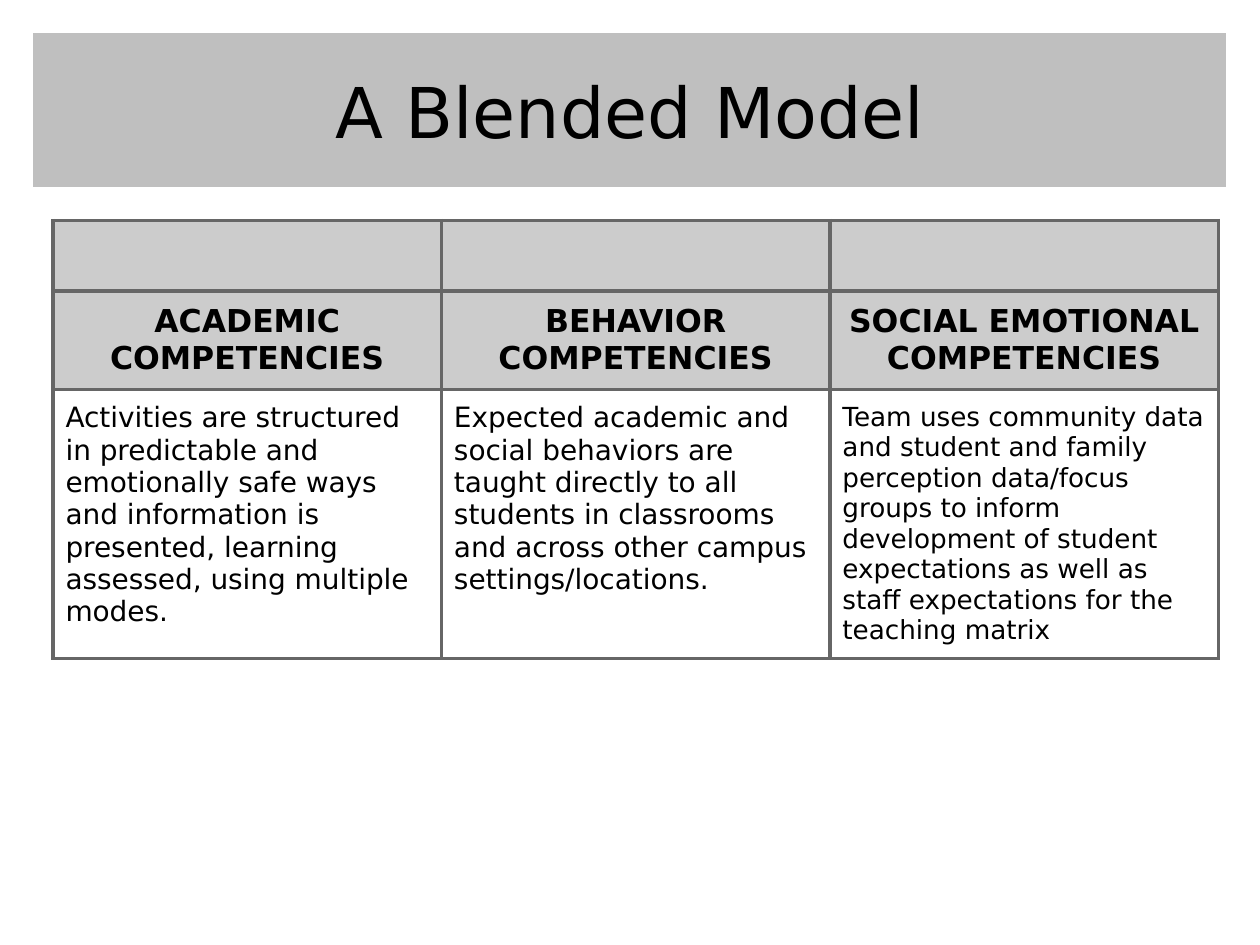
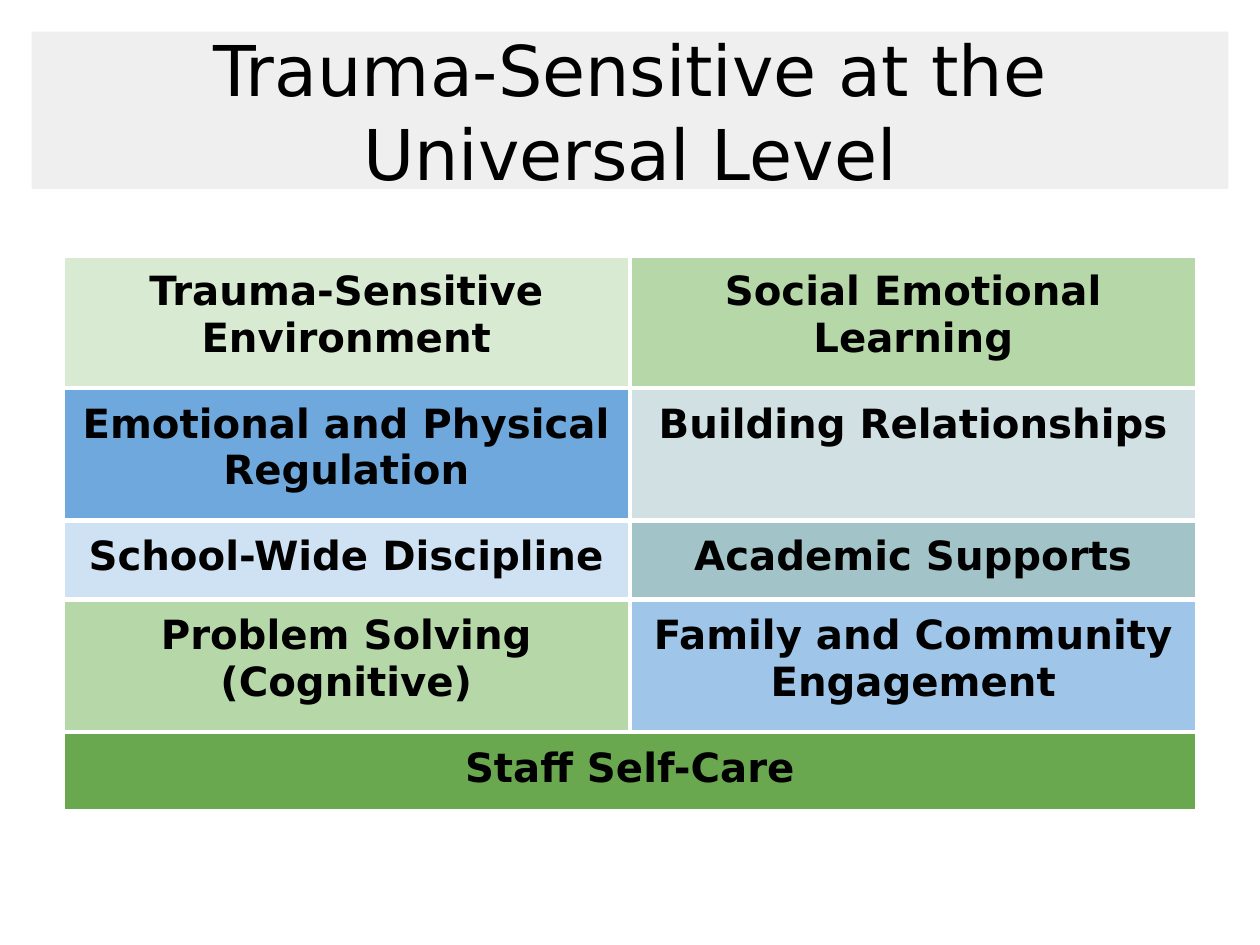
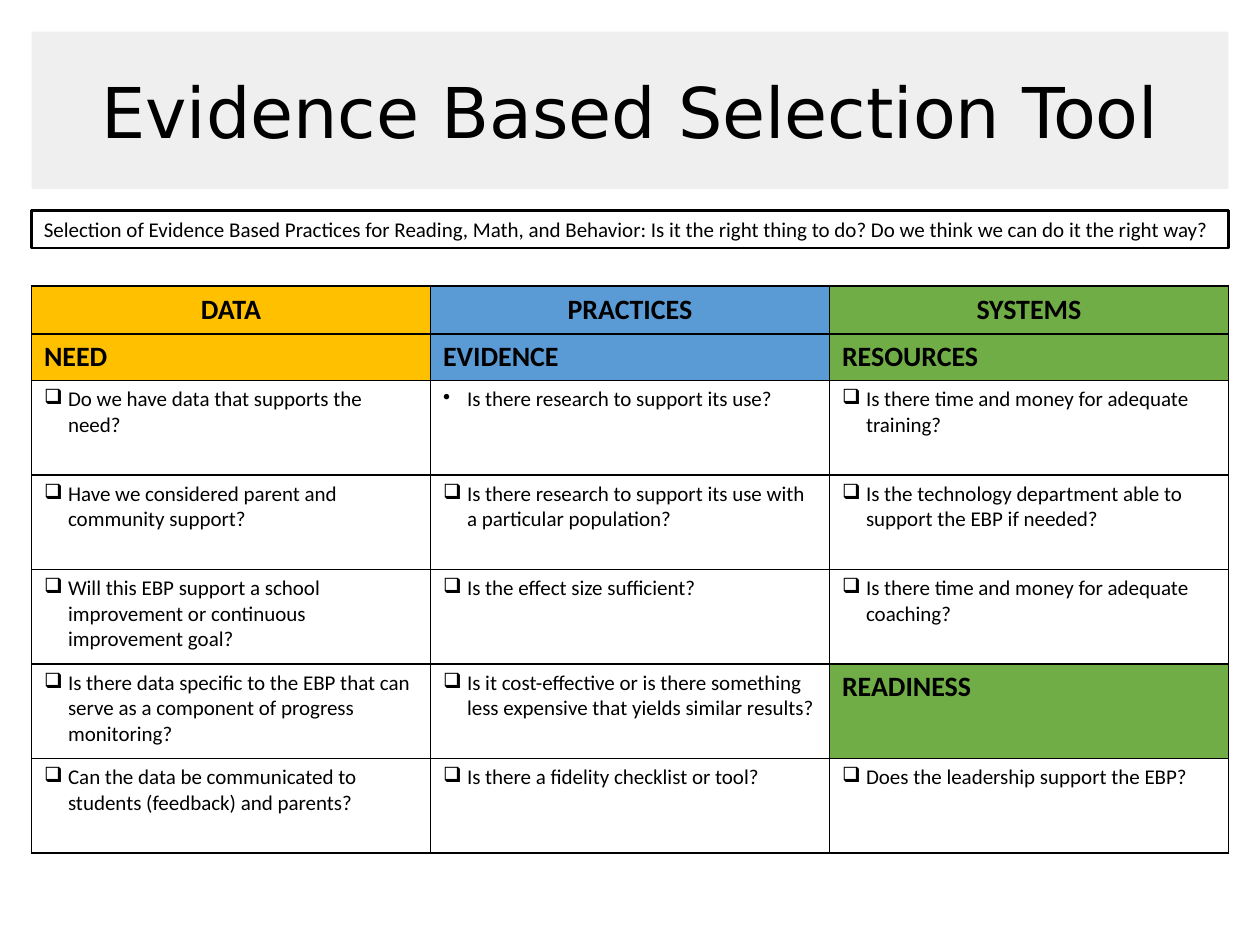
from dataclasses import dataclass

from lxml.etree import SubElement
from pptx import Presentation
from pptx.dml.color import RGBColor as RGB
from pptx.enum.shapes import MSO_SHAPE as SHAPE
from pptx.enum.text import MSO_ANCHOR as ANCHOR, MSO_AUTO_SIZE as AUTO, PP_ALIGN as ALIGN
from pptx.oxml.ns import qn
from pptx.util import Inches, Pt


@dataclass(frozen=True)
class Theme:
    font: str = "DejaVu Sans"
    tool_font: str = "Calibri"
    ink: str = "000000"
    paper: str = "FFFFFF"
    dark_band: str = "BFBFBF"
    light_band: str = "E8E8E8"
    header: str = "CCCCCC"
    rule: str = "666666"
    data: str = "FFC000"
    practices: str = "5B9BD5"
    systems: str = "70AD47"
    title_size: int = 40
    topic_size: int = 23
    heading_size: int = 18
    subheading_size: int = 16
    question_size: int = 12


theme = Theme()


def add_grid(slide, left, top, width, columns, row_heights):
    """Add a plain table with equal columns and the given row heights."""
    frame = slide.shapes.add_table(len(row_heights), columns, Inches(left), Inches(top),
                                   Inches(width), Inches(sum(row_heights)))
    grid = frame.table
    grid.first_row = grid.horz_banding = False
    for column in grid.columns:
        column.width = Inches(width / columns)
    for row, height in zip(grid.rows, row_heights):
        row.height = Inches(height)
    return grid


def style_cell(cell, text, size, border, fill=None, font=theme.font, bold=False,
               align=ALIGN.LEFT, anchor=ANCHOR.TOP, pad=0.1, bullet=None):
    """Fill a cell with text and give it its border (colour, points) and colour."""
    border_color, border_width = border
    cell.margin_left = cell.margin_right = Inches(0.1)
    cell.margin_top = cell.margin_bottom = Inches(pad)
    cell.vertical_anchor = anchor
    properties = cell._tc.get_or_add_tcPr()
    for side in ("a:lnL", "a:lnR", "a:lnT", "a:lnB"):
        line = SubElement(properties, qn(side), w=str(Pt(border_width)))
        SubElement(SubElement(line, qn("a:solidFill")), qn("a:srgbClr"), val=border_color)
    if fill:
        cell.fill.solid()
        cell.fill.fore_color.rgb = RGB.from_string(fill)
    else:
        cell.fill.background()

    cell.text = text
    for paragraph in cell.text_frame.paragraphs:
        paragraph.alignment = align
        paragraph.font.name = font
        paragraph.font.size = Pt(size)
        paragraph.font.bold = bold
        paragraph.font.color.rgb = RGB.from_string(theme.ink)
        if bullet:
            layout = paragraph._p.get_or_add_pPr()
            layout.set("marL", str(Inches(0.19)))
            layout.set("indent", str(-Inches(0.19)))
            bullet_mark = SubElement(layout, qn("a:buChar"), char=bullet)
            bullet_mark.addprevious(layout.makeelement(qn("a:buFontTx"), {}))
            layout.append(layout.find(qn("a:defRPr")))


prs = Presentation()
prs.slide_width, prs.slide_height = Inches(10), Inches(7.5)

# Slides with their title bands
slides = []
for heading, band, opacity in (
    ("A Blended Model", theme.dark_band, 100),
    ("Trauma-Sensitive at the Universal Level", theme.light_band, 67),
    ("Evidence Based Selection Tool", theme.light_band, 67),
):
    slide = prs.slides.add_slide(prs.slide_layouts[5])
    title = slide.shapes.title
    title.left, title.top, title.width, title.height = map(Inches, (0.25, 0.25, 9.5, 1.25))
    title.fill.solid()
    title.fill.fore_color.rgb = RGB.from_string(band)
    if opacity < 100:
        band_color = title._element.spPr.find(qn("a:solidFill"))[0]
        SubElement(band_color, qn("a:alpha"), val=str(opacity * 1000))
    title.text_frame.text = heading
    title.text_frame.auto_size = AUTO.NONE
    title.text_frame.vertical_anchor = ANCHOR.MIDDLE
    paragraph = title.text_frame.paragraphs[0]
    paragraph.alignment = ALIGN.CENTER
    paragraph.font.name = theme.font
    paragraph.font.size = Pt(theme.title_size)
    paragraph.font.color.rgb = RGB.from_string(theme.ink)
    slides.append(slide)
blended_slide, universal_slide, selection_slide = slides
blended_band = blended_slide.shapes.title
blended_band.line.color.rgb = RGB.from_string(theme.paper)
blended_band.line.width = Pt(2.25)

# Slide 1: competencies
competencies = (
    ("ACADEMIC COMPETENCIES", 16,
     "Activities are structured in predictable and emotionally safe ways and information is "
     "presented, learning assessed, using multiple modes."),
    ("BEHAVIOR\nCOMPETENCIES", 16,
     "Expected academic and social behaviors are taught directly to all students in classrooms "
     "and across other campus settings/locations."),
    ("SOCIAL EMOTIONAL COMPETENCIES", 15,
     "Team uses community data and student and family perception data/focus groups to inform "
     "development of student expectations as well as staff expectations for the teaching matrix"),
)
competency_grid = add_grid(blended_slide, 0.42, 1.75, 9.25, 3, (0.56, 0.56, 1.86))
competency_border = (theme.rule, 2.25)
for column, (competency, body_size, description) in enumerate(competencies):
    style_cell(competency_grid.cell(0, column), "", theme.heading_size, competency_border,
               theme.header)
    style_cell(competency_grid.cell(1, column), competency, theme.heading_size,
               competency_border, theme.header, bold=True, align=ALIGN.CENTER,
               anchor=ANCHOR.MIDDLE)
    style_cell(competency_grid.cell(2, column), description, body_size, competency_border,
               theme.paper)

# Slide 2: universal topics, the last one across both columns
topics = (
    (("Trauma-Sensitive Environment", "D9EAD3"), ("Social Emotional Learning", "B6D7A8")),
    (("Emotional and Physical Regulation", "6FA8DC"), ("Building Relationships", "D0E0E3")),
    (("School-Wide Discipline", "CFE2F3"), ("Academic Supports", "A2C4C9")),
    (("Problem Solving (Cognitive)", "B6D7A8"), ("Family and Community Engagement", "9FC5E8")),
    (("Staff Self-Care", "6AA84F"), ("", "6AA84F")),
)
topic_grid = add_grid(universal_slide, 0.5, 2.03, 9, 2, (1.05, 1.05, 0.63, 1.05, 0.63))
for row, pair in enumerate(topics):
    for column, (topic, color) in enumerate(pair):
        style_cell(topic_grid.cell(row, column), topic, theme.topic_size, (theme.paper, 3),
                   color, bold=True, align=ALIGN.CENTER)
topic_grid.cell(4, 0).merge(topic_grid.cell(4, 1))

# Slide 3: guiding question
guide = selection_slide.shapes.add_shape(SHAPE.RECTANGLE, Inches(0.25), Inches(1.67),
                                         Inches(9.5), Inches(0.3))
guide.shadow.inherit = False
guide.fill.background()
guide.line.color.rgb = RGB.from_string(theme.ink)
guide.line.width = Pt(1.5)
guide.text_frame.word_wrap = True
guide.text_frame.auto_size = AUTO.SHAPE_TO_FIT_TEXT
guide.text_frame.vertical_anchor = ANCHOR.TOP
guide.text_frame.text = ("Selection of Evidence Based Practices for Reading, Math, and Behavior: "
                         "Is it the right thing to do? Do we think we can do it the right way?")
guide_line = guide.text_frame.paragraphs[0]
guide_line.alignment = ALIGN.LEFT
guide_line.font.name = theme.tool_font
guide_line.font.size = Pt(theme.question_size)
guide_line.font.color.rgb = RGB.from_string(theme.ink)

# Slide 3: selection checklist
checklist = (
    ("DATA", "NEED", theme.data, (
        "Do we have data that supports the need?",
        "Have we considered parent and community support?",
        "Will this EBP support a school improvement or continuous improvement goal?",
        "Is there data specific to the EBP that can serve as a component of progress monitoring?",
        "Can the data be communicated to students (feedback) and parents?")),
    ("PRACTICES", "EVIDENCE", theme.practices, (
        "Is there research to support its use?",
        "Is there research to support its use with a particular population?",
        "Is the effect size sufficient?",
        "Is it cost-effective or is there something less expensive that yields similar results?",
        "Is there a fidelity checklist or tool?")),
    ("SYSTEMS", "RESOURCES", theme.systems, (
        "Is there time and money for adequate training?",
        "Is the technology department able to support the EBP if needed?",
        "Is there time and money for adequate coaching?",
        "READINESS",
        "Does the leadership support the EBP?")),
)
checklist_grid = add_grid(selection_slide, 0.25, 2.27, 9.5, 3, (0.38, 0.37) + (0.75,) * 5)
checklist_look = dict(border=(theme.ink, 1), font=theme.tool_font, pad=0.05)
for column, (area, criterion, color, questions) in enumerate(checklist):
    heading_look = dict(checklist_look, size=theme.subheading_size, fill=color, bold=True)
    style_cell(checklist_grid.cell(0, column), area, align=ALIGN.CENTER, **heading_look)
    style_cell(checklist_grid.cell(1, column), criterion, **heading_look)
    for row, question in enumerate(questions, start=2):
        cell = checklist_grid.cell(row, column)
        if question == "READINESS":
            style_cell(cell, question, **heading_look)
        else:
            mark = "•" if (row, column) == (2, 1) else "❑"
            style_cell(cell, question, size=theme.question_size, bullet=mark, **checklist_look)

prs.save("out.pptx")
